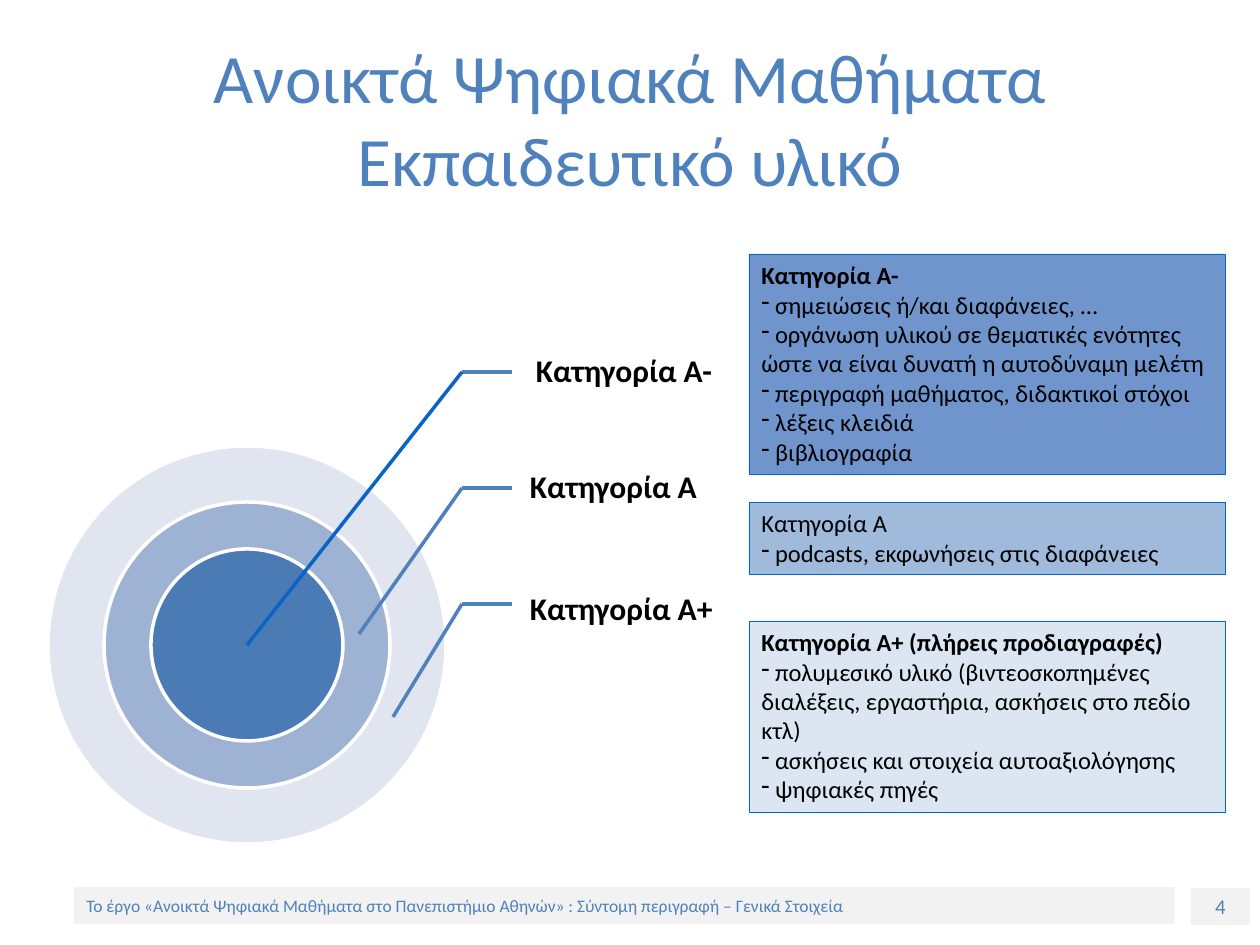
from lxml import etree
from pptx import Presentation
from pptx import util as u
from pptx.dml.color import RGBColor
from pptx.enum import shapes, text
from pptx.oxml import ns

EMU_PER_PX = 914400 / 126

BLACK = RGBColor(0x00, 0x00, 0x00)
WHITE = RGBColor(0xFF, 0xFF, 0xFF)
ACCENT = RGBColor(0x4F, 0x81, 0xBD)
BRIGHT = RGBColor(0x0B, 0x64, 0xC5)
BORDER = RGBColor(0x00, 0x66, 0xCC)
BAR_GREY = RGBColor(0xF2, 0xF2, 0xF2)
OUTER = RGBColor(0xC2, 0xCD, 0xE1)
MIDDLE = RGBColor(0x88, 0xA3, 0xCA)
INNER = RGBColor(0x4B, 0x7B, 0xB5)
CARD_MINUS = RGBColor(0x4C, 0x7B, 0xC0)
CARD_A = RGBColor(0x7F, 0xA3, 0xCF)
CARD_PLUS = RGBColor(0xDC, 0xE6, 0xF2)


def px(value):
    return u.Emu(round(value * EMU_PER_PX))


def write(paragraph, words, size, color=BLACK, bold=False, align=None, bullet=None, font="Calibri"):
    """Put formatted words into a paragraph, with a dash or other bullet if asked."""
    if align is not None:
        paragraph.alignment = align
    if bullet:
        properties = paragraph._p.get_or_add_pPr()
        properties.set("marL", "0")
        properties.set("indent", "0")
        etree.SubElement(properties, ns.qn("a:buChar")).set("char", bullet)
        words = " " + words
    run = paragraph.add_run()
    run.text = words
    run.font.name = font
    run.font.size = u.Pt(size)
    run.font.bold = bold
    run.font.color.rgb = color


class CategorySlide:
    label_size = 18
    card_size = 14
    line_width = u.Pt(2)

    def __init__(self, deck):
        self.slide = deck.slides.add_slide(deck.slide_layouts[5])
        self.shapes = self.slide.shapes

    def shape(self, kind, left, top, width, height, fill, opacity=100):
        item = self.shapes.add_shape(kind, px(left), px(top), px(width), px(height))
        item.shadow.inherit = False
        item.fill.solid()
        item.fill.fore_color.rgb = fill
        if opacity < 100:
            color = item.fill._xPr.find(".//" + ns.qn("a:srgbClr"))
            etree.SubElement(color, ns.qn("a:alpha")).set("val", str(opacity * 1000))
        item.text_frame.word_wrap = True
        return item

    def title(self, words, left, top, width, height):
        title = self.shapes.title
        title.left, title.top, title.width, title.height = map(px, (left, top, width, height))
        frame = title.text_frame
        frame.auto_size = text.MSO_AUTO_SIZE.NONE
        frame.vertical_anchor = text.MSO_ANCHOR.MIDDLE
        write(frame.paragraphs[0], words, 39.6, ACCENT, align=text.PP_ALIGN.CENTER)

    def bar(self, words, left, top, width, height, size, align):
        bar = self.shape(shapes.MSO_SHAPE.RECTANGLE, left, top, width, height, BAR_GREY)
        bar.line.fill.background()
        bar.text_frame.vertical_anchor = text.MSO_ANCHOR.MIDDLE
        write(bar.text_frame.paragraphs[0], words, size, ACCENT, align=align)

    def ring(self, center, diameter, fill, opacity):
        left, top = (c - diameter / 2 for c in center)
        ring = self.shape(shapes.MSO_SHAPE.OVAL, left, top, diameter, diameter, fill, opacity)
        ring.line.color.rgb = WHITE
        ring.line.width = self.line_width

    def label(self, words, left, top, width, height=116):
        frame = self.shapes.add_textbox(px(left), px(top), px(width), px(height)).text_frame
        frame.word_wrap = True
        frame.vertical_anchor = text.MSO_ANCHOR.MIDDLE
        frame.margin_left = px(18)
        frame.margin_top = frame.margin_right = frame.margin_bottom = px(4)
        frame.paragraphs[0].line_spacing = 0.9
        write(frame.paragraphs[0], words, self.label_size, bold=True)

    def line(self, start, end, color):
        line = self.shapes.add_connector(shapes.MSO_CONNECTOR.STRAIGHT, *map(px, start + end))
        line.line.color.rgb = color
        line.line.width = self.line_width
        etree.SubElement(line._element.spPr, ns.qn("a:effectLst"))

    def card(self, heading, items, top, height, fill, opacity=100, bold=True):
        card = self.shape(shapes.MSO_SHAPE.RECTANGLE, 749, top, 476, height, fill, opacity)
        card.line.color.rgb = BORDER
        card.line.width = u.Pt(0.25)
        frame = card.text_frame
        frame.vertical_anchor = text.MSO_ANCHOR.TOP
        left = text.PP_ALIGN.LEFT
        write(frame.paragraphs[0], heading, self.card_size, bold=bold, align=left)
        for item in items:
            write(frame.add_paragraph(), item, self.card_size, align=left, bullet="-")


def main():
    deck = Presentation()
    deck.slide_width, deck.slide_height = px(1260), px(945)
    page = CategorySlide(deck)

    # Title and footer
    page.title("Ανοικτά Ψηφιακά Μαθήματα Εκπαιδευτικό υλικό", 63, 38, 1134, 158)
    page.bar("4", 1191, 888, 59, 37, 12, text.PP_ALIGN.CENTER)
    page.bar("Το έργο «Ανοικτά Ψηφιακά Μαθήματα στο Πανεπιστήμιο Αθηνών» : "
             "Σύντομη περιγραφή – Γενικά Στοιχεία",
             74, 887, 1101, 37, 10, text.PP_ALIGN.LEFT)

    # Nested categories, widest first
    center = (247, 645)
    for diameter, fill, opacity in ((398, OUTER, 50), (286, MIDDLE, 75), (192, INNER, 100)):
        page.ring(center, diameter, fill, opacity)

    # Labels with their leader lines
    first_elbow, elbow_step = 372, 116
    labels = (
        ("Κατηγορία Α-", 518, 314, 199, center, BRIGHT),
        ("Κατηγορία Α", 512, 430, 199, (359, 634), ACCENT),
        ("Κατηγορία Α+", 512, 552, 237, (393, 717), ACCENT),
    )
    for row, (name, left, top, width, tip, color) in enumerate(labels):
        elbow = (462, first_elbow + row * elbow_step)
        page.label(name, left, top, width)
        page.line(elbow, (512, elbow[1]), ACCENT)
        page.line(elbow, tip, color)

    # Category descriptions
    page.card("Κατηγορία Α+ (πλήρεις προδιαγραφές)", (
        "πολυμεσικό υλικό (βιντεοσκοπημένες διαλέξεις, εργαστήρια, ασκήσεις στο πεδίο κτλ)",
        "ασκήσεις και στοιχεία αυτοαξιολόγησης",
        "ψηφιακές πηγές",
    ), 621, 191, CARD_PLUS)
    page.card("Κατηγορία Α-", (
        "σημειώσεις ή/και διαφάνειες, …",
        "οργάνωση υλικού σε θεματικές ενότητες ώστε να είναι δυνατή η αυτοδύναμη μελέτη",
        "περιγραφή μαθήματος, διδακτικοί στόχοι",
        "λέξεις κλειδιά",
        "βιβλιογραφία",
    ), 254, 220, CARD_MINUS, opacity=80)
    page.card("Κατηγορία Α", ("podcasts, εκφωνήσεις στις διαφάνειες",),
              502, 72, CARD_A, opacity=75, bold=False)

    deck.save("out.pptx")


if __name__ == "__main__":
    main()
